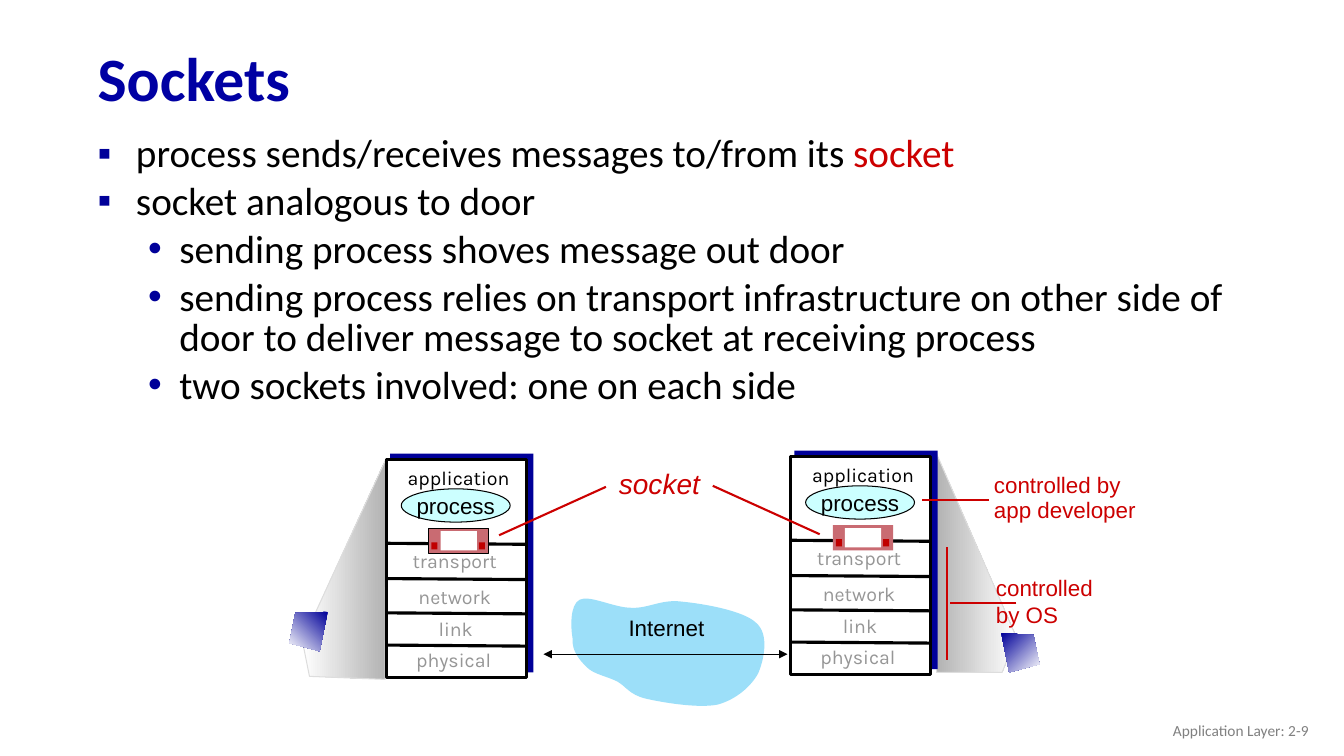
from dataclasses import dataclass

from lxml.etree import SubElement
from pptx import Presentation
from pptx.dml.color import RGBColor
from pptx.enum.shapes import MSO_CONNECTOR, MSO_SHAPE
from pptx.enum.text import MSO_ANCHOR, MSO_AUTO_SIZE, PP_ALIGN
from pptx.oxml.ns import qn
from pptx.util import Inches, Pt


@dataclass(frozen=True)
class Theme:
    """Colours, fonts and type sizes of the deck."""
    title: str = "0000A3"
    navy: str = "000099"
    black: str = "000000"
    white: str = "FFFFFF"
    red: str = "CC0000"
    gray: str = "969696"
    foot: str = "808080"
    shade: str = "B2B2B2"
    edge: str = "DDDDDD"
    cloud: str = "9CDFF9"
    oval: str = "CCFFFF"
    door: str = "C96B72"
    knob: str = "C00000"
    main: str = "Calibri"
    sans: str = "Arial"
    stack: str = "Karla"
    head_pt: float = 44
    body_pt: float = 28
    call_pt: float = 20
    note_pt: float = 16
    tag_pt: float = 14
    foot_pt: float = 11
    thin: float = 0.75
    mid: float = 1.5
    thick: float = 2.25


T = Theme()
HEAD = dict(name=T.main, size=T.head_pt, color=T.title, bold=True)
BODY = dict(name=T.main, size=T.body_pt, color=T.black)
FOOT = dict(name=T.main, size=T.foot_pt, color=T.foot)
NOTE = dict(name=T.sans, size=T.note_pt, color=T.red)
PLAIN = {**NOTE, "color": T.black}
CALL = dict(name=T.sans, size=T.call_pt, color=T.red, italic=True)
DIM = dict(name=T.stack, size=T.tag_pt, color=T.gray)
TAG = {**DIM, "color": T.black}

POINTS = [
    (0, [("process sends/receives messages to/from its ", T.black), ("socket", T.red)]),
    (0, [("socket analogous to door", T.black)]),
    (1, [("sending process shoves message out door", T.black)]),
    (1, [("sending process relies on transport infrastructure on other side of "
          "door to deliver message to socket at receiving process", T.black)]),
    (1, [("two sockets involved: one on each side", T.black)]),
]
BULLETS = [("▪", 0.38, 0.38), ("•", 0.81, 0.31)]
LAYERS = [("application", 0, -0.01, TAG), ("transport", -0.04, 0.81, DIM),
          ("network", -0.04, 1.17, DIM), ("link", -0.03, 1.49, DIM),
          ("physical", -0.05, 1.8, DIM)]
RULES = [0.83, 1.18, 1.52, 1.84]
CLOUD = [(5.68, 6.34), (5.66, 6.23), (5.65, 6), (5.75, 5.95), (5.85, 5.9),
         (6.09, 6.03), (6.26, 6.03), (6.43, 6.04), (6.56, 5.94), (6.77, 5.97),
         (6.98, 5.99), (7.38, 6.06), (7.5, 6.18), (7.63, 6.29), (7.58, 6.54),
         (7.52, 6.68), (7.45, 6.81), (7.3, 6.94), (7.12, 6.99), (6.93, 7.03),
         (6.57, 6.97), (6.4, 6.93), (6.24, 6.89), (6.21, 6.81), (6.12, 6.76),
         (6.02, 6.71), (5.89, 6.69), (5.82, 6.62), (5.75, 6.55), (5.67, 6.46),
         (5.68, 6.34)]


def style(run, form):
    """Set the font of a run from a dict of format values."""
    for key, value in form.items():
        if key == "color":
            run.font.color.rgb = RGBColor.from_string(value)
        else:
            setattr(run.font, key, Pt(value) if key == "size" else value)


def write(frame, lines, form, align=PP_ALIGN.LEFT, space=1.0):
    """Write lines of text into a frame."""
    for i, line in enumerate(lines):
        para = frame.paragraphs[0] if i == 0 else frame.add_paragraph()
        para.alignment, para.line_spacing = align, space
        run = para.add_run()
        run.text = line
        style(run, form)


def text(shapes, box, lines, form, align=PP_ALIGN.LEFT, space=1.0, wrap=True,
         anchor=MSO_ANCHOR.TOP):
    """Add a text box."""
    frame = shapes.add_textbox(*map(Inches, box)).text_frame
    frame.word_wrap, frame.vertical_anchor = wrap, anchor
    frame.auto_size = MSO_AUTO_SIZE.NONE if wrap else MSO_AUTO_SIZE.SHAPE_TO_FIT_TEXT
    write(frame, lines, form, align, space)


def paint(shape, fill, edge=None, width=T.thin, angle=0):
    """Give a shape its line and a flat or two-colour fill."""
    shape.shadow.inherit = False
    if isinstance(fill, tuple):
        shape.fill.gradient()
        shape.fill.gradient_angle = angle
        for stop, color in zip(shape.fill.gradient_stops, fill):
            stop.color.rgb = RGBColor.from_string(color)
    else:
        shape.fill.solid()
        shape.fill.fore_color.rgb = RGBColor.from_string(fill)
    if edge:
        shape.line.color.rgb = RGBColor.from_string(edge)
        shape.line.width = Pt(width)
    else:
        shape.line.fill.background()


def block(shapes, box, fill, edge=None, width=T.thin, kind=MSO_SHAPE.RECTANGLE):
    """Add a preset shape."""
    shape = shapes.add_shape(kind, *map(Inches, box))
    paint(shape, fill, edge, width)
    return shape


def form(shapes, dots, fill, edge=None, angle=0):
    """Add a closed outline through the dots."""
    dots = [(Inches(x), Inches(y)) for x, y in dots]
    pen = shapes.build_freeform(*dots[0])
    pen.add_line_segments(dots[1:], close=True)
    shape = pen.convert_to_shape()
    paint(shape, fill, edge, angle=angle)
    return shape


def bend(shape):
    """Turn each three line segments of an outline into one cubic curve."""
    lines = list(shape._element.iter(qn("a:lnTo")))
    for i in range(0, len(lines) - 2, 3):
        first, *rest = lines[i:i + 3]
        cubic = first.makeelement(qn("a:cubicBezTo"))
        first.addprevious(cubic)
        for line in (first, *rest):
            cubic.append(line[0])
            line.getparent().remove(line)


def rule(shapes, ends, color, width, arrows=False):
    """Add a straight line, with arrows at both ends if asked."""
    line = shapes.add_connector(MSO_CONNECTOR.STRAIGHT, *map(Inches, ends))
    line.line.color.rgb = RGBColor.from_string(color)
    line.line.width = Pt(width)
    if arrows:
        for end in ("a:headEnd", "a:tailEnd"):
            SubElement(line.line._get_or_add_ln(), qn(end), type="triangle")
    SubElement(line._element.spPr, qn("a:effectLst"))


def points(shapes, box):
    """Add the bullet list."""
    frame = shapes.add_textbox(*map(Inches, box)).text_frame
    frame.word_wrap = True
    for i, (level, runs) in enumerate(POINTS):
        para = frame.paragraphs[0] if i == 0 else frame.add_paragraph()
        para.level, para.line_spacing = level, 0.85
        para.space_before = Pt(T.body_pt * 0.2)
        mark, left, hang = BULLETS[level]
        prop = para._p.get_or_add_pPr()
        prop.set("marL", str(Inches(left)))
        prop.set("indent", str(-Inches(hang)))
        SubElement(SubElement(prop, qn("a:buClr")), qn("a:srgbClr"), val=T.navy)
        SubElement(prop, qn("a:buFont"), typeface=T.sans)
        SubElement(prop, qn("a:buChar"), char=mark)
        for words, color in runs:
            run = para.add_run()
            run.text = words
            style(run, {**BODY, "color": color})


def door(shapes, x, y, edge):
    """Add the socket as a door with two knobs."""
    group = shapes.add_group_shape().shapes
    block(group, (x, y, 0.6, 0.25), T.door, edge)
    block(group, (x + 0.12, y + 0.03, 0.36, 0.19), T.white)
    for shift in (0.5, 0.03):
        block(group, (x + shift, y + 0.14, 0.06, 0.07), T.knob)


def host(shapes, x, y, edge=None):
    """Add a host with its stack of layers, process and socket."""
    block(shapes, (x + 0.04, y - 0.06, 1.42, 2.17), T.navy)
    block(shapes, (x, y, 1.39, 2.16), T.white, T.black, T.thick)
    for drop in RULES:
        rule(shapes, (x, y + drop, x + 1.39, y + drop + 0.01), T.black, T.thick)
    for name, shift, drop, look in LAYERS:
        text(shapes, (x + shift, y + drop, 1.44, 0.36), [name], look, PP_ALIGN.CENTER, 1.1)
    oval = block(shapes, (x + 0.15, y + 0.29, 1.08, 0.33), T.oval, T.black,
                 kind=MSO_SHAPE.OVAL)
    oval.text_frame.word_wrap = False
    oval.text_frame.vertical_anchor = MSO_ANCHOR.MIDDLE
    write(oval.text_frame, ["process"], PLAIN, PP_ALIGN.CENTER)
    door(shapes, x + 0.42, y + 0.68, edge)


def net(shapes):
    """Add the cloud between the hosts."""
    bend(form(shapes, CLOUD, T.cloud))
    text(shapes, (6.13, 6.04, 0.96, 0.37), ["Internet"], PLAIN, PP_ALIGN.CENTER, wrap=False)
    rule(shapes, (5.39, 6.49, 7.81, 6.49), T.black, T.thin, arrows=True)


def notes(shapes):
    """Add the red labels and their lines."""
    text(shapes, (9.78, 5.65, 1.16, 0.9), ["controlled", "by OS"], NOTE, wrap=False)
    text(shapes, (9.76, 4.66, 1.61, 0.58), ["controlled by", "app developer"], NOTE,
         space=0.9, wrap=False)
    text(shapes, (6.04, 4.62, 1.04, 0.4), ["socket"], CALL, space=0.9, wrap=False)
    for ends in ((9.81, 4.96, 9.14, 4.96), (9.39, 5.43, 9.39, 6.55), (10.08, 5.98, 9.42, 5.98),
                 (4.95, 5.31, 6.01, 4.83), (8.13, 5.3, 7.07, 4.82)):
        rule(shapes, ends, T.red, T.mid)


def main():
    """Build the slide and save it."""
    deck = Presentation()
    deck.slide_width, deck.slide_height = Inches(13.33), Inches(7.5)
    shapes = deck.slides.add_slide(deck.slide_layouts[6]).shapes
    text(shapes, (0.87, 0.32, 11.5, 0.98), ["Sockets"], HEAD, space=0.9,
         anchor=MSO_ANCHOR.MIDDLE)
    text(shapes, (10.08, 7.05, 3, 0.4), ["Application Layer: 2-9"], FOOT, PP_ALIGN.RIGHT,
         anchor=MSO_ANCHOR.MIDDLE)
    points(shapes, (0.87, 1.3, 11.99, 2.55))
    form(shapes, [(10.08, 6.32), (9.28, 4.48), (9.29, 6.67), (9.94, 6.67)],
         (T.shade, T.white), T.edge)
    form(shapes, [(3, 6.36), (3.83, 4.55), (3.82, 6.74), (3.07, 6.71)],
         (T.white, T.shade), T.edge)
    net(shapes)
    host(shapes, 3.83, 4.56, T.black)
    host(shapes, 7.84, 4.53)
    notes(shapes)
    form(shapes, [(3.25, 6.07), (2.93, 6.08), (2.87, 6.38), (3.17, 6.46)],
         (T.navy, T.white), angle=225)
    form(shapes, [(9.93, 6.28), (10.25, 6.3), (10.31, 6.59), (10.01, 6.67)],
         (T.navy, T.white), angle=315)
    deck.save("out.pptx")


if __name__ == "__main__":
    main()
